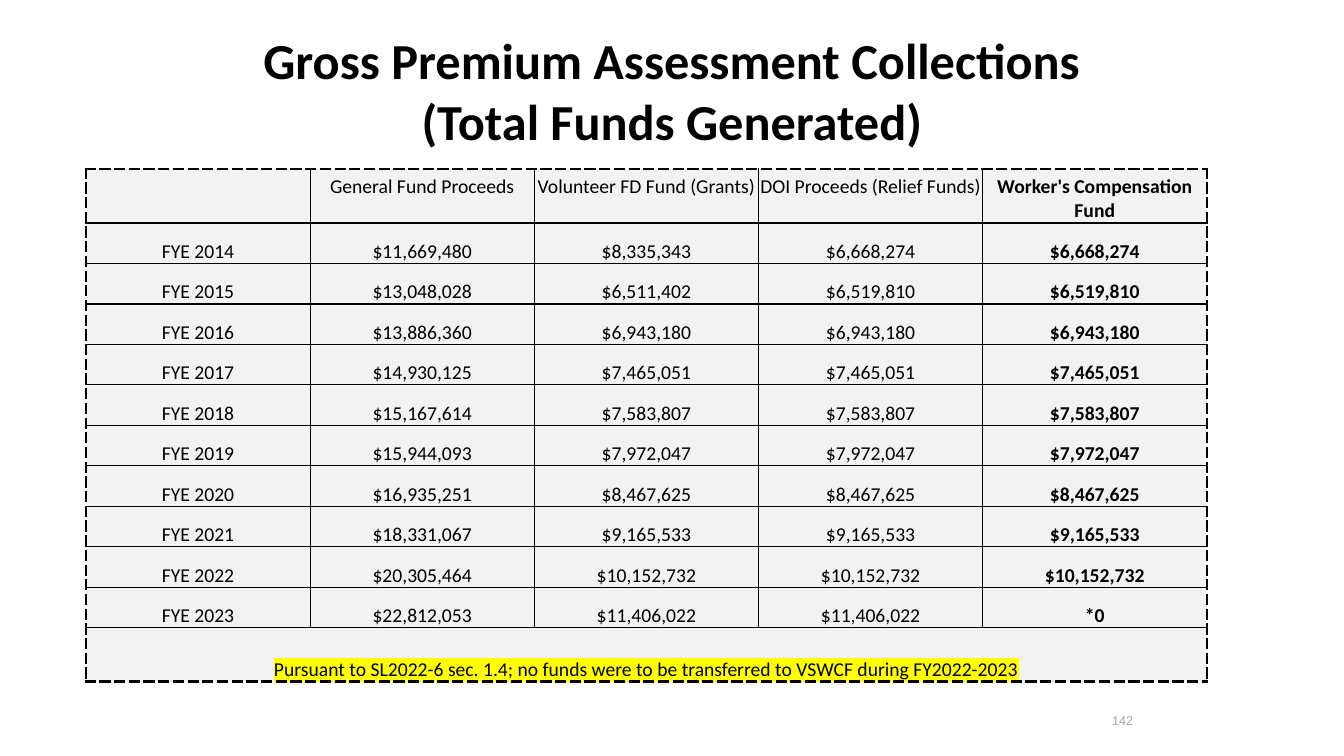
from lxml.etree import SubElement
from pptx import Presentation
from pptx.dml.color import RGBColor
from pptx.enum.text import MSO_ANCHOR, PP_ALIGN
from pptx.oxml.ns import qn
from pptx.util import Emu, Pt

SCALE = 12192000 / 1344
INK, CELL_FILL, HIGHLIGHT, PAGE_GREY = "000000", "F2F2F2", "FFFF00", "A6A6A6"
TITLE = "Gross Premium Assessment Collections\v(Total Funds Generated)"
HEADERS = ["", "General Fund Proceeds", "Volunteer FD Fund (Grants)",
           "DOI Proceeds (Relief Funds)", "Worker's Compensation Fund"]
COLLECTIONS = [
    ["FYE 2014", "$11,669,480", "$8,335,343", "$6,668,274", "$6,668,274"],
    ["FYE 2015", "$13,048,028", "$6,511,402", "$6,519,810", "$6,519,810"],
    ["FYE 2016", "$13,886,360", "$6,943,180", "$6,943,180", "$6,943,180"],
    ["FYE 2017", "$14,930,125", "$7,465,051", "$7,465,051", "$7,465,051"],
    ["FYE 2018", "$15,167,614", "$7,583,807", "$7,583,807", "$7,583,807"],
    ["FYE 2019", "$15,944,093", "$7,972,047", "$7,972,047", "$7,972,047"],
    ["FYE 2020", "$16,935,251", "$8,467,625", "$8,467,625", "$8,467,625"],
    ["FYE 2021", "$18,331,067", "$9,165,533", "$9,165,533", "$9,165,533"],
    ["FYE 2022", "$20,305,464", "$10,152,732", "$10,152,732", "$10,152,732"],
    ["FYE 2023", "$22,812,053", "$11,406,022", "$11,406,022", "*0"],
]
NOTE = ("Pursuant to SL2022-6 sec. 1.4; no funds were to be transferred "
        "to VSWCF during FY2022-2023")


def px(n):
    """Turn pixels into EMU."""
    return Emu(round(n * SCALE))


def rgb(color):
    """Turn a hex string into a colour."""
    return RGBColor.from_string(color)


def style(p, size, color=INK, font="Calibri", bold=False, align=PP_ALIGN.CENTER):
    """Set the alignment and font of a paragraph."""
    p.alignment = align
    p.font.size = Pt(size)
    p.font.bold = bold
    p.font.name = font
    p.font.color.rgb = rgb(color)


def add_text(s, box, text, *look):
    """Add a vertically centred text box and return its paragraph."""
    tf = s.shapes.add_textbox(*map(px, box)).text_frame
    tf.word_wrap = True
    tf.vertical_anchor = MSO_ANCHOR.MIDDLE
    p = tf.paragraphs[0]
    p.text = text
    style(p, *look)
    return p


def add_color(parent, color):
    """Add a colour element and return it."""
    return SubElement(parent, qn("a:srgbClr"), val=color)


def shadow_text(r):
    """Give a run a soft offset shadow."""
    effects = SubElement(r.font._element, qn("a:effectLst"))
    shadow = SubElement(effects, qn("a:outerShdw"), blurRad="38100",
                        dist="38100", dir="2700000", algn="tl")
    SubElement(add_color(shadow, INK), qn("a:alpha"), val="43000")


def highlight(r, color):
    """Give a run a marker colour."""
    add_color(SubElement(r.font._element, qn("a:highlight")), color)


def set_border(cell, side, outer):
    """Draw one cell side, heavy and dashed on the table's outer edge."""
    line = SubElement(cell._tc.get_or_add_tcPr(), qn(f"a:ln{side}"),
                      w=str(Pt(2.25 if outer else 1)))
    add_color(SubElement(line, qn("a:solidFill")), INK)
    SubElement(line, qn("a:prstDash"), val="lgDash" if outer else "solid")


def fill_cell(cell, text, bold, bottom):
    """Set the text, margins and fill of a cell."""
    cell.fill.solid()
    cell.fill.fore_color.rgb = rgb(CELL_FILL)
    cell.vertical_anchor = MSO_ANCHOR.BOTTOM
    cell.margin_left = cell.margin_right = cell.margin_top = px(1)
    cell.margin_bottom = px(bottom)
    p = cell.text_frame.paragraphs[0]
    p.text = text
    style(p, 14, INK, "Calibri", bold)


def add_collections(s):
    """Add the table of yearly collections with its closing note."""
    rows = [HEADERS, *COLLECTIONS, [NOTE, "", "", "", ""]]
    last_row, last_col = len(rows) - 1, len(HEADERS) - 1
    frame = s.shapes.add_table(len(rows), len(HEADERS),
                               *map(px, (86, 169, 1121, 513)))
    table = frame.table
    table.first_row = table.horz_banding = False
    for i, row in enumerate(table.rows):
        row.height = px(54) if i in (0, last_row) else px(405) // len(COLLECTIONS)
    for i, values in enumerate(rows):
        for j, text in enumerate(values):
            cell = table.cell(i, j)
            set_border(cell, "L", j == 0)
            set_border(cell, "R", j == last_col or i == last_row)
            set_border(cell, "T", i == 0)
            set_border(cell, "B", i == last_row)
            one_line_header = i == 0 and j < last_col
            fill_cell(cell, text, j == last_col, 24 if one_line_header else 0)
    note = table.cell(last_row, 0)
    note.merge(table.cell(last_row, last_col))
    highlight(note.text_frame.paragraphs[0].runs[0], HIGHLIGHT)


def main():
    """Build the slide and save it."""
    prs = Presentation()
    prs.slide_width, prs.slide_height = px(1344), px(756)
    s = prs.slides.add_slide(prs.slide_layouts[6])
    title = add_text(s, (0, 24, 1344, 132), TITLE, 36, INK, "Calibri", True)
    for r in title.runs:
        shadow_text(r)
    add_collections(s)
    add_text(s, (964, 701, 179, 40), "142", 9, PAGE_GREY, "Arial", False,
             PP_ALIGN.RIGHT)
    prs.save("out.pptx")


if __name__ == "__main__":
    main()
